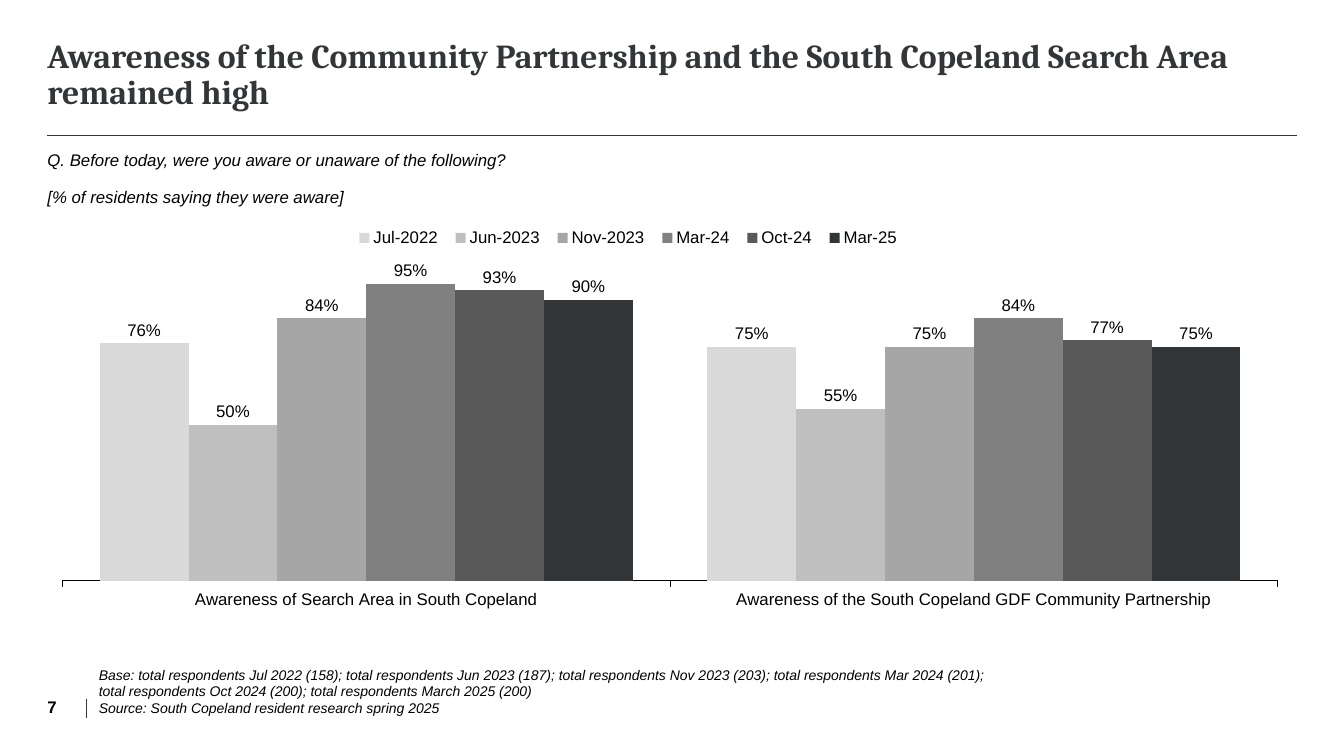
from dataclasses import dataclass

from lxml.etree import SubElement
from pptx import Presentation
from pptx.chart.data import CategoryChartData
from pptx.dml.color import RGBColor
from pptx.enum.chart import XL_CHART_TYPE as ChartType
from pptx.enum.chart import XL_LABEL_POSITION as LabelPos
from pptx.enum.chart import XL_LEGEND_POSITION as LegendPos
from pptx.enum.chart import XL_TICK_LABEL_POSITION as TickLabels
from pptx.enum.chart import XL_TICK_MARK as TickMark
from pptx.enum.shapes import MSO_CONNECTOR as Connector
from pptx.enum.text import MSO_ANCHOR as Anchor
from pptx.enum.text import MSO_AUTO_SIZE as AutoSize
from pptx.enum.text import PP_ALIGN as Align
from pptx.oxml.ns import qn
from pptx.util import Inches, Pt

WIDTH, HEIGHT = Inches(13.33), Inches(7.5)
# Grid of a hundred columns and a hundred rows
COLUMN, ROW = WIDTH / 100, HEIGHT / 100
MARGIN, RIGHT = 3.53, 96.47
FOOT_TOP, FOOT_HEIGHT = 90, 4.8

BLACK = RGBColor(0x00, 0x00, 0x00)
SLATE = RGBColor(0x32, 0x36, 0x38)
GREYS = [RGBColor(g, g, g) for g in (0xD9, 0xBF, 0xA6, 0x80, 0x59)]


@dataclass
class Area:
    """A box in grid columns and rows."""
    left: float
    top: float
    width: float
    height: float

    def emu(self) -> tuple[int, int, int, int]:
        return (round(self.left * COLUMN), round(self.top * ROW),
                round(self.width * COLUMN), round(self.height * ROW))


@dataclass
class Style:
    size: float
    face: str = "Arial"
    color: RGBColor = BLACK
    bold: bool = False
    italic: bool = False
    spacing: float = 1.0
    after: float = 0
    anchor: Anchor = Anchor.BOTTOM


@dataclass
class Rule:
    start: tuple[float, float]
    end: tuple[float, float]
    weight: float


@dataclass
class Wave:
    name: str
    search_area: float
    partnership: float
    color: RGBColor


RULES = [
    Rule((MARGIN, 17.87), (RIGHT, 17.87), 0.75),
    Rule((6.45, 92.4), (6.45, 94.93), 0.5),
]
WAVES = [
    Wave("Jul-2022", 0.76, 0.75, GREYS[0]),
    Wave("Jun-2023", 0.50, 0.55, GREYS[1]),
    Wave("Nov-2023", 0.84, 0.75, GREYS[2]),
    Wave("Mar-24", 0.95, 0.84, GREYS[3]),
    Wave("Oct-24", 0.93, 0.77, GREYS[4]),
    Wave("Mar-25", 0.90, 0.75, SLATE),
]


def write(box, area: Area, style: Style, lines: list[str]) -> None:
    box.left, box.top, box.width, box.height = area.emu()
    frame = box.text_frame
    frame.word_wrap = True
    frame.auto_size = AutoSize.NONE
    frame.vertical_anchor = style.anchor
    frame.margin_left = frame.margin_right = 0
    frame.margin_top = frame.margin_bottom = 0
    for number, line in enumerate(lines):
        para = frame.add_paragraph() if number else frame.paragraphs[0]
        props = para._p.get_or_add_pPr()
        props.set("marL", "0")
        props.set("indent", "0")
        SubElement(props, qn("a:buNone"))
        para.alignment = Align.LEFT
        para.line_spacing = style.spacing
        para.space_before, para.space_after = Pt(0), Pt(style.after)
        run = para.add_run()
        run.text = line
        font = run.font
        font.name, font.size = style.face, Pt(style.size)
        font.bold, font.italic = style.bold, style.italic
        font.color.rgb = style.color


def draw_rule(slide, rule: Rule) -> None:
    (x1, y1), (x2, y2) = rule.start, rule.end
    line = slide.shapes.add_connector(
        Connector.STRAIGHT, round(x1 * COLUMN), round(y1 * ROW),
        round(x2 * COLUMN), round(y2 * ROW))
    line.line.color.rgb = SLATE
    line.line.width = Pt(rule.weight)
    SubElement(line._element.spPr, qn("a:effectLst"))


def place(part, position: int, shares: Area, inner: bool = False) -> None:
    """Fix a chart part at shares of the chart's size."""
    for old in part.findall(qn("c:layout")):
        part.remove(old)
    layout = SubElement(part, qn("c:layout"))
    part.insert(position, layout)
    manual = SubElement(layout, qn("c:manualLayout"))
    settings = {"layoutTarget": "inner"} if inner else {}
    settings |= {"xMode": "edge", "yMode": "edge", "x": shares.left,
                 "y": shares.top, "w": shares.width, "h": shares.height}
    for tag, value in settings.items():
        SubElement(manual, qn(f"c:{tag}")).set("val", str(value))


def style_font(font) -> None:
    font.name, font.size = "Arial", Pt(12)
    font.color.rgb = BLACK


def draw_awareness(slide, area: Area) -> None:
    data = CategoryChartData(number_format="0%")
    data.categories = ["Awareness of Search Area in South Copeland",
                       "Awareness of the South Copeland GDF Community Partnership"]
    for wave in WAVES:
        data.add_series(wave.name, (wave.search_area, wave.partnership))
    chart = slide.shapes.add_chart(
        ChartType.COLUMN_CLUSTERED, *area.emu(), data).chart
    chart.has_title = False
    style_font(chart.font)

    # Legend above the columns
    chart.has_legend = True
    chart.legend.position = LegendPos.TOP
    chart.legend.include_in_layout = False
    style_font(chart.legend.font)
    place(chart.legend._element, 1, Area(0.24, 0.01, 0.45, 0.07))
    place(chart._chartSpace.chart.plotArea, 0,
          Area(0.012, 0.113, 0.973, 0.695), inner=True)

    # Axes
    topics, shares = chart.category_axis, chart.value_axis
    topics.major_tick_mark = TickMark.OUTSIDE
    topics.tick_label_position = TickLabels.LOW
    topics.format.line.color.rgb = BLACK
    topics.format.line.width = Pt(0.75)
    style_font(topics.tick_labels.font)
    shares.minimum_scale, shares.maximum_scale = 0, 1
    shares.major_unit = 0.25
    shares.has_major_gridlines = False
    shares.visible = False

    # Columns and their values
    plot = chart.plots[0]
    plot.gap_width, plot.overlap = 84, 0
    plot.vary_by_categories = False
    for wave, series in zip(WAVES, plot.series):
        series.format.fill.solid()
        series.format.fill.fore_color.rgb = wave.color
        series.invert_if_negative = False
        labels = series.data_labels
        labels.show_value = True
        labels.position = LabelPos.OUTSIDE_END
        labels.number_format, labels.number_format_is_linked = "0%", False
        style_font(labels.font)


def main() -> None:
    deck = Presentation()
    deck.slide_width, deck.slide_height = WIDTH, HEIGHT
    slide = deck.slides.add_slide(deck.slide_layouts[1])
    headline, question = slide.placeholders

    # Headline and survey question
    write(headline, Area(MARGIN, 7.6, 90.17, 7.2),
          Style(24, "Cambria", SLATE, bold=True, spacing=0.9),
          ["Awareness of the Community Partnership and the South Copeland "
           "Search Area remained high"])
    write(question, Area(MARGIN, 19.47, 94.6, 5.73),
          Style(12, italic=True, spacing=1.13, after=10, anchor=Anchor.TOP),
          ["Q. Before today, were you aware or unaware of the following?",
           "[% of residents saying they were aware]"])

    for rule in RULES:
        draw_rule(slide, rule)
    draw_awareness(slide, Area(MARGIN, 28.8, RIGHT - MARGIN, 59.47))

    # Page number and base note
    page = Area(MARGIN, FOOT_TOP, 2.33, FOOT_HEIGHT)
    write(slide.shapes.add_textbox(*page.emu()), page, Style(12, bold=True), ["7"])
    base = Area(7.35, FOOT_TOP, 67.44, FOOT_HEIGHT)
    write(slide.shapes.add_textbox(*base.emu()), base, Style(10, italic=True),
          ["Base: total respondents Jul 2022 (158); total respondents Jun 2023 (187); "
           "total respondents Nov 2023 (203); total respondents Mar 2024 (201); "
           "total respondents Oct 2024 (200); total respondents March 2025 (200)",
           "Source: South Copeland resident research spring 2025"])
    deck.save("out.pptx")


if __name__ == "__main__":
    main()
